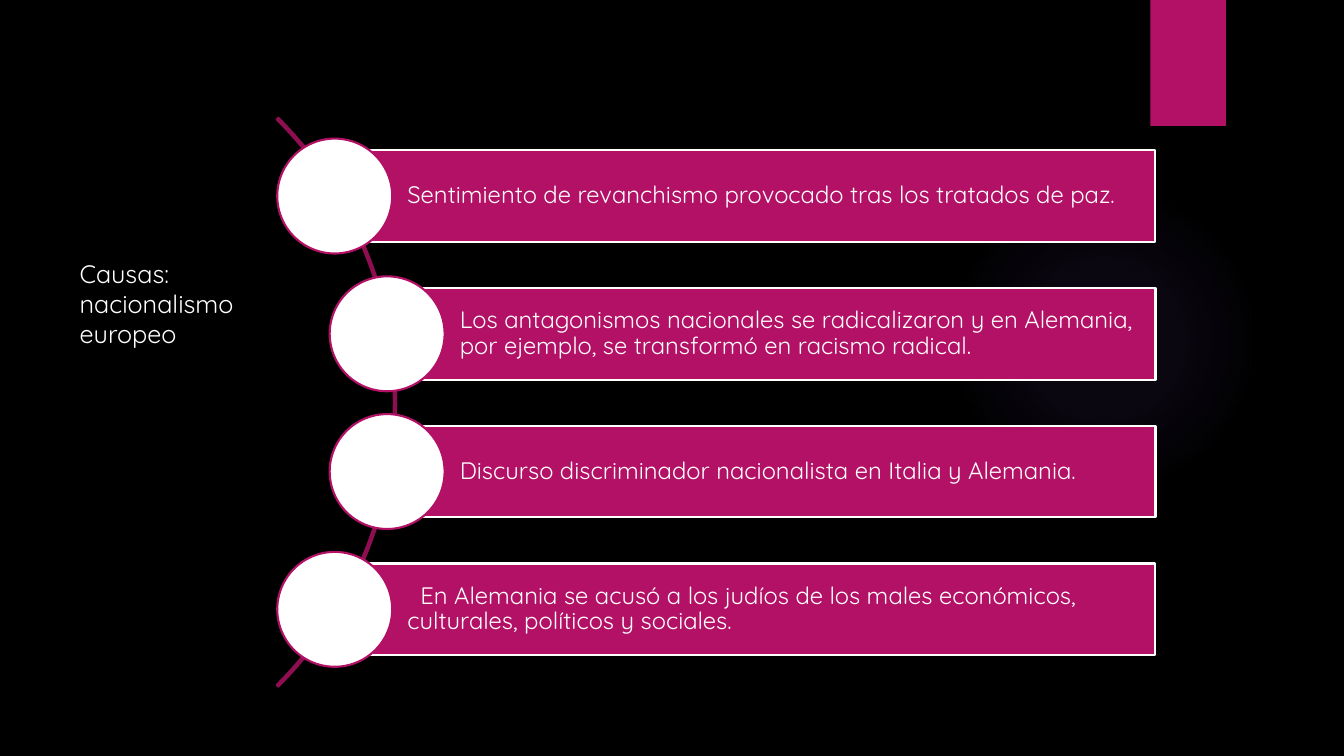
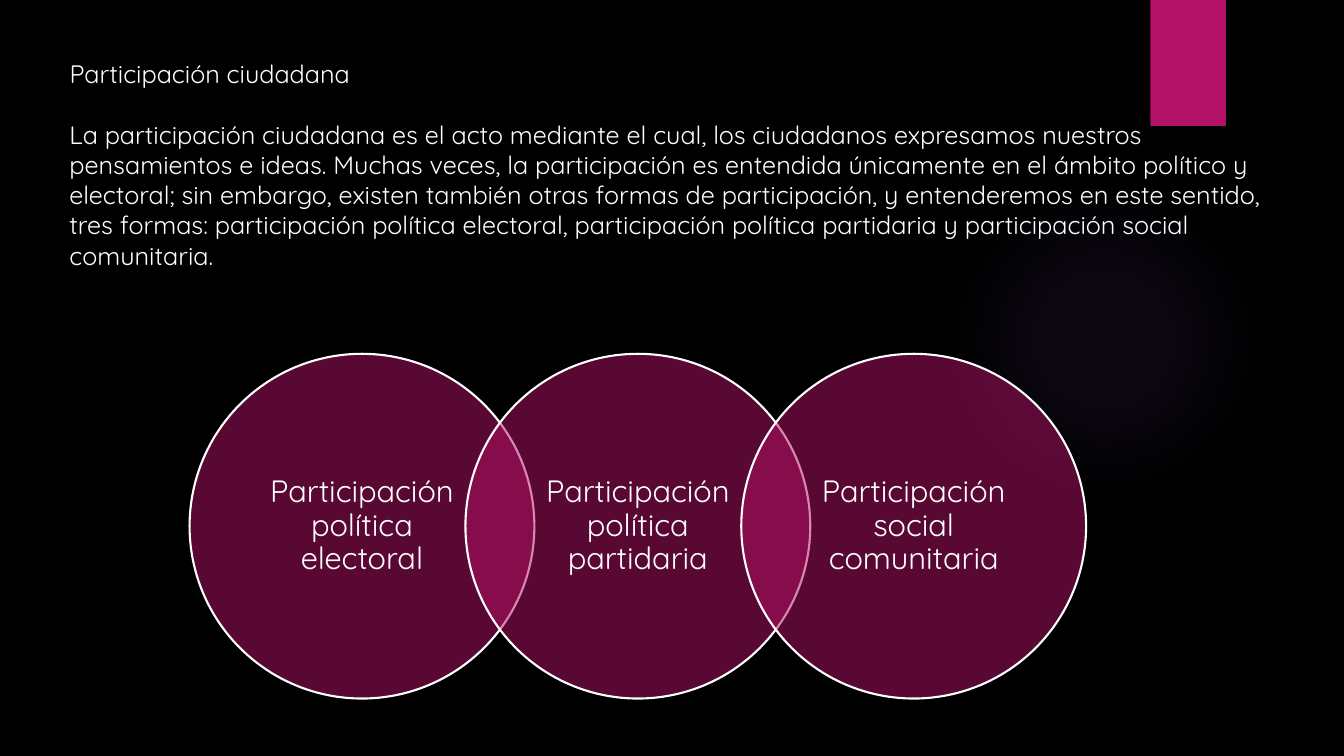
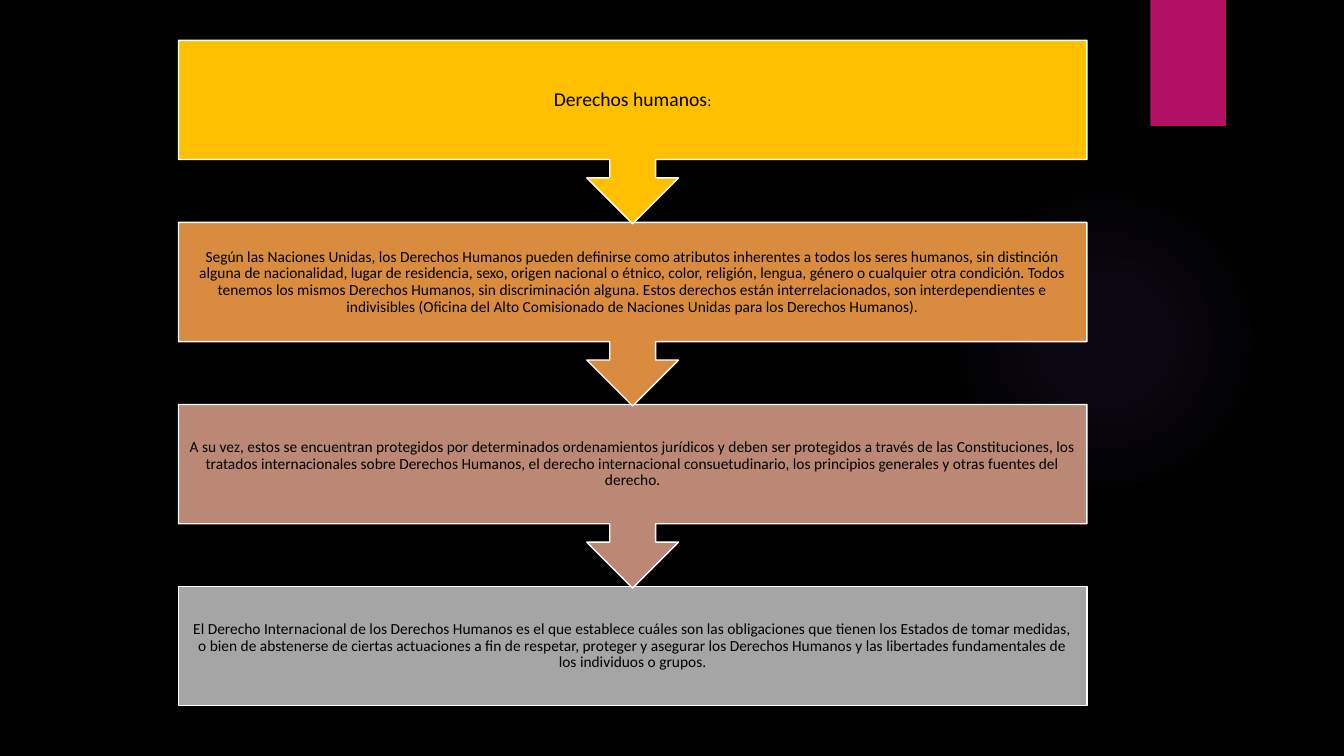
from dataclasses import dataclass

from pptx import Presentation
from pptx.dml.color import RGBColor
from pptx.enum import shapes, text
from pptx.oxml import parse_xml
from pptx.oxml.ns import nsdecls, qn
from pptx.util import Emu, Pt

CAUSES = {
    "title": "Causas: nacionalismo europeo",
    "rows": [
        (332, 0, "Sentimiento de revanchismo provocado tras los tratados de paz."),
        (384, 0, "Los antagonismos nacionales se radicalizaron y en Alemania, por ejemplo, "
                 "se transformó en racismo radical."),
        (384, 0, "Discurso discriminador nacionalista en Italia y Alemania."),
        (332, 13, "En Alemania se acusó a los judíos de los males económicos, culturales, "
                  "políticos y sociales."),
    ],
}
CIVIC = {
    "title": "Participación ciudadana",
    "body": "La participación ciudadana es el acto mediante el cual, los ciudadanos expresamos "
            "nuestros pensamientos e ideas. Muchas veces, la participación es entendida "
            "únicamente en el ámbito político y electoral; sin embargo, existen también otras "
            "formas de participación, y entenderemos en este sentido, tres formas: "
            "participación política electoral, participación política partidaria y "
            "participación social comunitaria.",
    "forms": [
        "Participación política electoral",
        "Participación política partidaria",
        "Participación social comunitaria",
    ],
}
RIGHTS = [
    ("FFC000", [("Derechos humanos", 14), (":", 11)]),
    ("D98C3F", [(
        "Según las Naciones Unidas, los Derechos Humanos pueden definirse como atributos "
        "inherentes a todos los seres humanos, sin distinción alguna de nacionalidad, lugar de "
        "residencia, sexo, origen nacional o étnico, color, religión, lengua, género o "
        "cualquier otra condición. Todos tenemos los mismos Derechos Humanos, sin "
        "discriminación alguna. Estos derechos están interrelacionados, son interdependientes "
        "e indivisibles (Oficina del Alto Comisionado de Naciones Unidas para los Derechos "
        "Humanos).", 11)]),
    ("BB8876", [(
        "A su vez, estos se encuentran protegidos por determinados ordenamientos jurídicos y "
        "deben ser protegidos a través de las Constituciones, los tratados internacionales "
        "sobre Derechos Humanos, el derecho internacional consuetudinario, los principios "
        "generales y otras fuentes del derecho.", 11)]),
    ("A5A5A5", [(
        "El Derecho Internacional de los Derechos Humanos es el que establece cuáles son las "
        "obligaciones que tienen los Estados de tomar medidas, o bien de abstenerse de ciertas "
        "actuaciones a fin de respetar, proteger y asegurar los Derechos Humanos y las "
        "libertades fundamentales de los individuos o grupos.", 11)]),
]


@dataclass(frozen=True)
class Theme:
    black: str = "000000"
    white: str = "FFFFFF"
    pink: str = "B31166"
    arc: str = "8F0E52"
    glow: str = "9B6BF2"
    font: str = "Quicksand"
    plain: str = "Calibri"
    title: int = 18
    row: int = 17
    form: int = 22
    line: float = 1.5
    thin: float = 1


T = Theme()
KIND = shapes.MSO_SHAPE
LEFT, MID = text.PP_ALIGN.LEFT, text.PP_ALIGN.CENTER
GLOW = [(0, 7), (36, 6), (69, 0)]


def px(n):
    return Emu(round(n * 9144))


def rgb(code):
    return RGBColor.from_string(code)


def put(frame, runs, color=T.white, font=T.font, align=LEFT, space=1.0,
        inset=(10, 5, 10, 5), anchor=text.MSO_ANCHOR.TOP, indent=0):
    frame.word_wrap = True
    frame.auto_size = text.MSO_AUTO_SIZE.NONE
    frame.vertical_anchor = anchor
    (frame.margin_left, frame.margin_top,
     frame.margin_right, frame.margin_bottom) = map(px, inset)
    para = frame.paragraphs[0]
    para.alignment = align
    para.line_spacing = space
    if indent:
        para._p.get_or_add_pPr().set("indent", str(px(indent)))
    for words, size in runs:
        run = para.add_run()
        run.text = words
        run.font.name = font
        run.font.size = Pt(size)
        run.font.color.rgb = rgb(color)


def draw(slide, kind, box, fill=None, line=None, width=T.line):
    shape = slide.shapes.add_shape(kind, *map(px, box))
    shape.shadow.inherit = False
    if fill:
        shape.fill.solid()
        shape.fill.fore_color.rgb = rgb(fill)
    else:
        shape.fill.background()
    if line:
        shape.line.color.rgb = rgb(line)
        shape.line.width = Pt(width)
    else:
        shape.line.fill.background()
    return shape


def head(slide, words, box):
    title = slide.shapes.title
    title.left, title.top, title.width, title.height = map(px, box)
    put(title.text_frame, [(words, T.title)])


def brand(deck, slide):
    master = deck.slide_master
    master.background.fill.solid()
    master.background.fill.fore_color.rgb = rgb(T.black)
    glow = draw(slide, KIND.OVAL, (941, 183, 308, 308))
    stops = "".join(
        f'<a:gs pos="{pos * 1000}"><a:srgbClr val="{T.glow}">'
        f'<a:alpha val="{alpha * 1000}"/></a:srgbClr></a:gs>' for pos, alpha in GLOW)
    props = glow.element.spPr
    props.replace(props.find(qn("a:noFill")), parse_xml(
        f'<a:gradFill {nsdecls("a")}><a:gsLst>{stops}</a:gsLst><a:path path="circle">'
        '<a:fillToRect l="50000" t="50000" r="50000" b="50000"/></a:path></a:gradFill>'))
    band = draw(slide, KIND.RECTANGLE, (1141, 0, 75, 125), T.pink)
    for shape in (glow, band):
        master.shapes.element.append(shape.element)


def causes(slide):
    head(slide, CAUSES["title"], (69, 251, 183, 101))
    arc = draw(slide, KIND.BLOCK_ARC, (-405, 0, 798, 798), line=T.arc)
    for spot, value in enumerate((189, 27, 0.003)):
        arc.adjustments[spot] = value
    top, pitch, high, disc, right = 149, 136.67, 91, 114, 1146
    for i, (left, indent, words) in enumerate(CAUSES["rows"]):
        y = top + i * pitch
        bar = draw(slide, KIND.RECTANGLE, (left, y, right - left, high), T.pink, T.white)
        put(bar.text_frame, [(words, T.row)], space=0.9, inset=(72, 5, 5, 5),
            anchor=text.MSO_ANCHOR.MIDDLE, indent=indent)
        draw(slide, KIND.OVAL, (left - disc / 2, y + (high - disc) / 2, disc, disc),
             T.white, T.pink)


def civic(slide):
    head(slide, CIVIC["title"], (59, 53, 1204, 40))
    body = slide.shapes.add_textbox(*map(px, (59, 113, 1204, 162)))
    put(body.text_frame, [(CIVIC["body"], T.title)])
    left, top, size = 188, 351, 342
    for i, words in enumerate(CIVIC["forms"]):
        ring = draw(slide, KIND.OVAL, (left + i * size * 0.8, top, size, size),
                    T.pink, T.white)
        tint = ring.element.spPr.find(qn("a:solidFill")).find(qn("a:srgbClr"))
        tint.append(parse_xml(f'<a:alpha {nsdecls("a")} val="50000"/>'))
        put(ring.text_frame, [(words, T.form)], align=MID, space=0.9,
            inset=(19, 3, 19, 3), anchor=text.MSO_ANCHOR.MIDDLE)


def rights(slide):
    left, top, wide, pitch, last = 177, 40, 901, 180.67, len(RIGHTS) - 1
    for i, (fill, runs) in reversed(list(enumerate(RIGHTS))):
        kind, high = (KIND.RECTANGLE, 118) if i == last else (KIND.DOWN_ARROW_CALLOUT, 182)
        step = draw(slide, kind, (left, top + i * pitch, wide, high), fill, T.white, T.thin)
        put(step.text_frame, runs, T.black, T.plain, MID, 0.9, (9, 9, 9, 9),
            text.MSO_ANCHOR.MIDDLE)


def main():
    deck = Presentation()
    deck.slide_width, deck.slide_height = px(1333), px(750)
    for i, (build, layout) in enumerate([(causes, 5), (civic, 5), (rights, 6)]):
        slide = deck.slides.add_slide(deck.slide_layouts[layout])
        if i == 0:
            brand(deck, slide)
        build(slide)
    deck.save("out.pptx")


if __name__ == "__main__":
    main()
